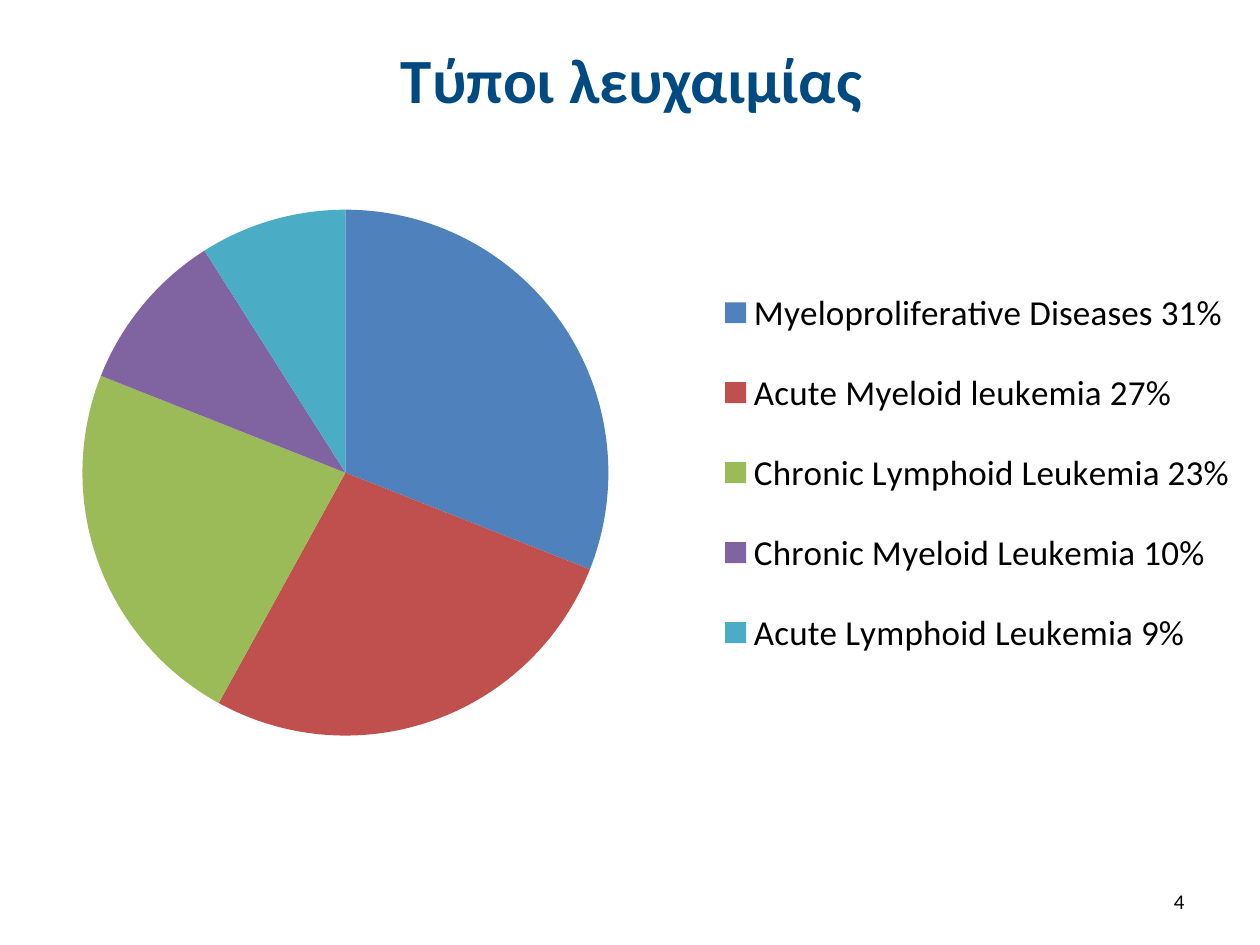
from lxml import etree
from pptx import Presentation
from pptx import util as u
from pptx.chart.data import CategoryChartData
from pptx.dml.color import RGBColor
from pptx.enum import chart as charts, text
from pptx.oxml.ns import qn
from pptx.util import Cm

NAVY = RGBColor(0x00, 0x4A, 0x82)
BLACK = RGBColor(0x00, 0x00, 0x00)
BLUE = RGBColor(0x4F, 0x81, 0xBD)
RED = RGBColor(0xC0, 0x50, 0x4D)
GREEN = RGBColor(0x9B, 0xBB, 0x59)
PURPLE = RGBColor(0x80, 0x64, 0xA2)
TEAL = RGBColor(0x4B, 0xAC, 0xC6)

LEUKEMIA_TYPES = [
    ("Myeloproliferative Diseases", 31, BLUE),
    ("Acute Myeloid leukemia", 27, RED),
    ("Chronic Lymphoid Leukemia", 23, GREEN),
    ("Chronic Myeloid Leukemia", 10, PURPLE),
    ("Acute Lymphoid Leukemia", 9, TEAL),
]


def manual_layout(x, y, w, h, inner=False):
    """Return a c:layout element; lengths are fractions of the chart."""
    layout = etree.Element(qn("c:layout"))
    manual = etree.SubElement(layout, qn("c:manualLayout"))
    settings = [("layoutTarget", "inner")] if inner else []
    settings += [("xMode", "edge"), ("yMode", "edge"),
                 ("x", x), ("y", y), ("w", w), ("h", h)]
    for tag, value in settings:
        etree.SubElement(manual, qn(f"c:{tag}")).set("val", str(value))
    return layout


def drop_layout(parent):
    for layout in parent.findall(qn("c:layout")):
        parent.remove(layout)


class SlideBuilder:
    font_name = "Calibri"

    def __init__(self, slide):
        self.slide = slide

    def style(self, font, size, color=BLACK, bold=False):
        font.name = self.font_name
        font.size = u.Pt(size)
        font.color.rgb = color
        font.bold = bold

    def label(self, wording, box, size, align, color=BLACK, bold=False):
        frame = self.slide.shapes.add_textbox(*map(Cm, box)).text_frame
        frame.word_wrap = True
        frame.vertical_anchor = text.MSO_ANCHOR.MIDDLE
        frame.text = wording
        paragraph = frame.paragraphs[0]
        paragraph.alignment = align
        self.style(paragraph.runs[0].font, size, color, bold)

    def pie(self, slices, box):
        data = CategoryChartData()
        data.categories = [f"{name} {share}%" for name, share, _ in slices]
        data.add_series("Series 1", [share for _, share, _ in slices])
        chart = self.slide.shapes.add_chart(
            charts.XL_CHART_TYPE.PIE, *map(Cm, box), data).chart
        chart.has_title = False
        self.style(chart.font, 18)

        plot = chart.plots[0]
        plot.vary_by_categories = True
        for index, (_, _, color) in enumerate(slices):
            fill = plot.series[0].points[index].format.fill
            fill.solid()
            fill.fore_color.rgb = color
        plot_area = plot._element.getparent()
        drop_layout(plot_area)
        plot_area.insert(0, manual_layout(0.09, 0.03, 0.41, 0.94, inner=True))

        chart.has_legend = True
        legend = chart.legend
        legend.position = charts.XL_LEGEND_POSITION.RIGHT
        legend.include_in_layout = False
        self.style(legend.font, 20)
        drop_layout(legend._element)
        legend._element.find(qn("c:legendPos")).addnext(
            manual_layout(0.58, 0.11, 0.41, 0.78))


def main():
    deck = Presentation()
    deck.slide_width, deck.slide_height = Cm(25.4), Cm(19.05)
    builder = SlideBuilder(deck.slides.add_slide(deck.slide_layouts[6]))
    builder.label("Τύποι λευχαιμίας", (1.3, 0.33, 22.86, 2.51), 36,
                  text.PP_ALIGN.CENTER, NAVY, bold=True)
    builder.pie(LEUKEMIA_TYPES, (-0.71, 3.89, 26.01, 11.28))
    builder.label("4", (18.2, 17.65, 5.93, 1.02), 12, text.PP_ALIGN.RIGHT)
    deck.save("out.pptx")


if __name__ == "__main__":
    main()
